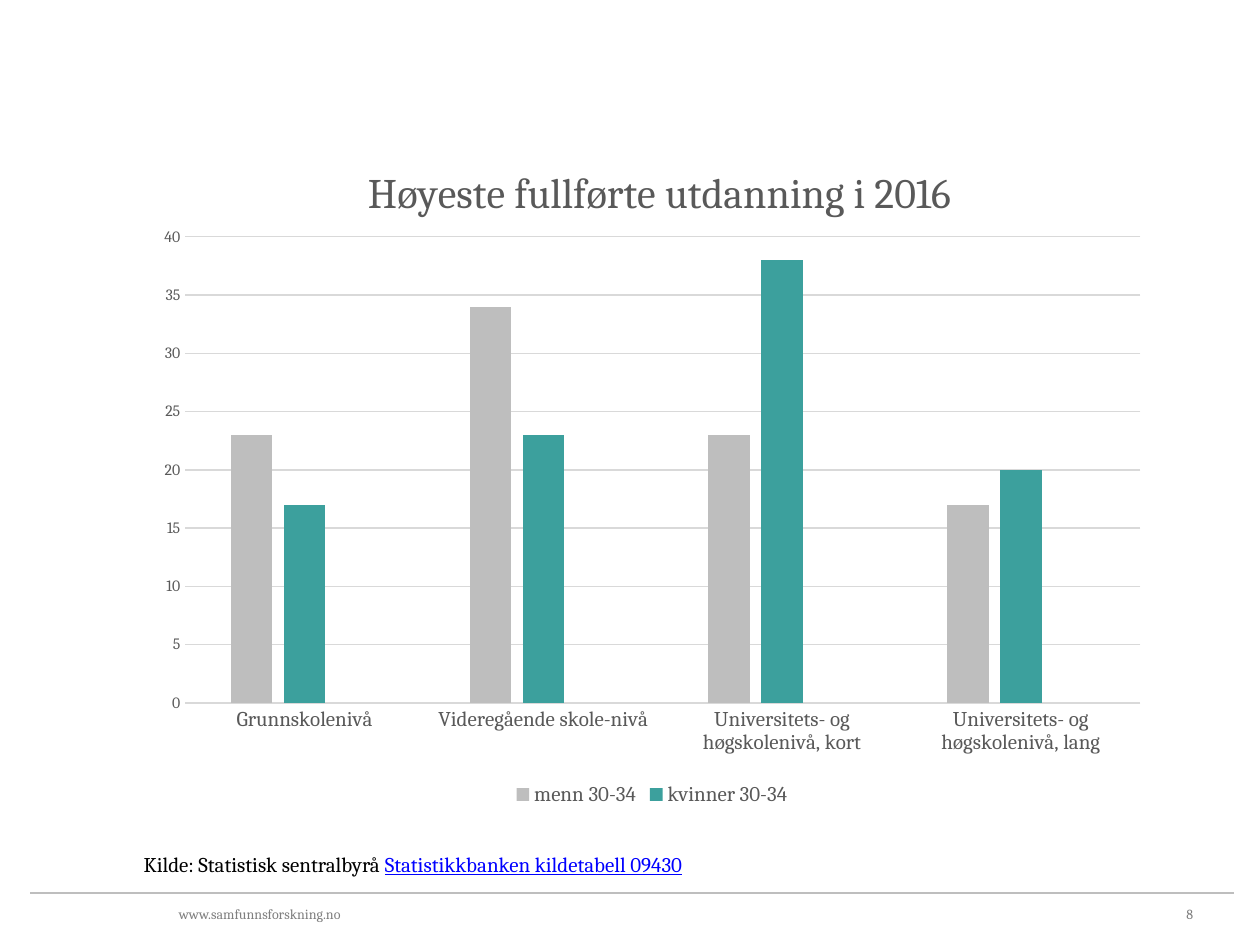
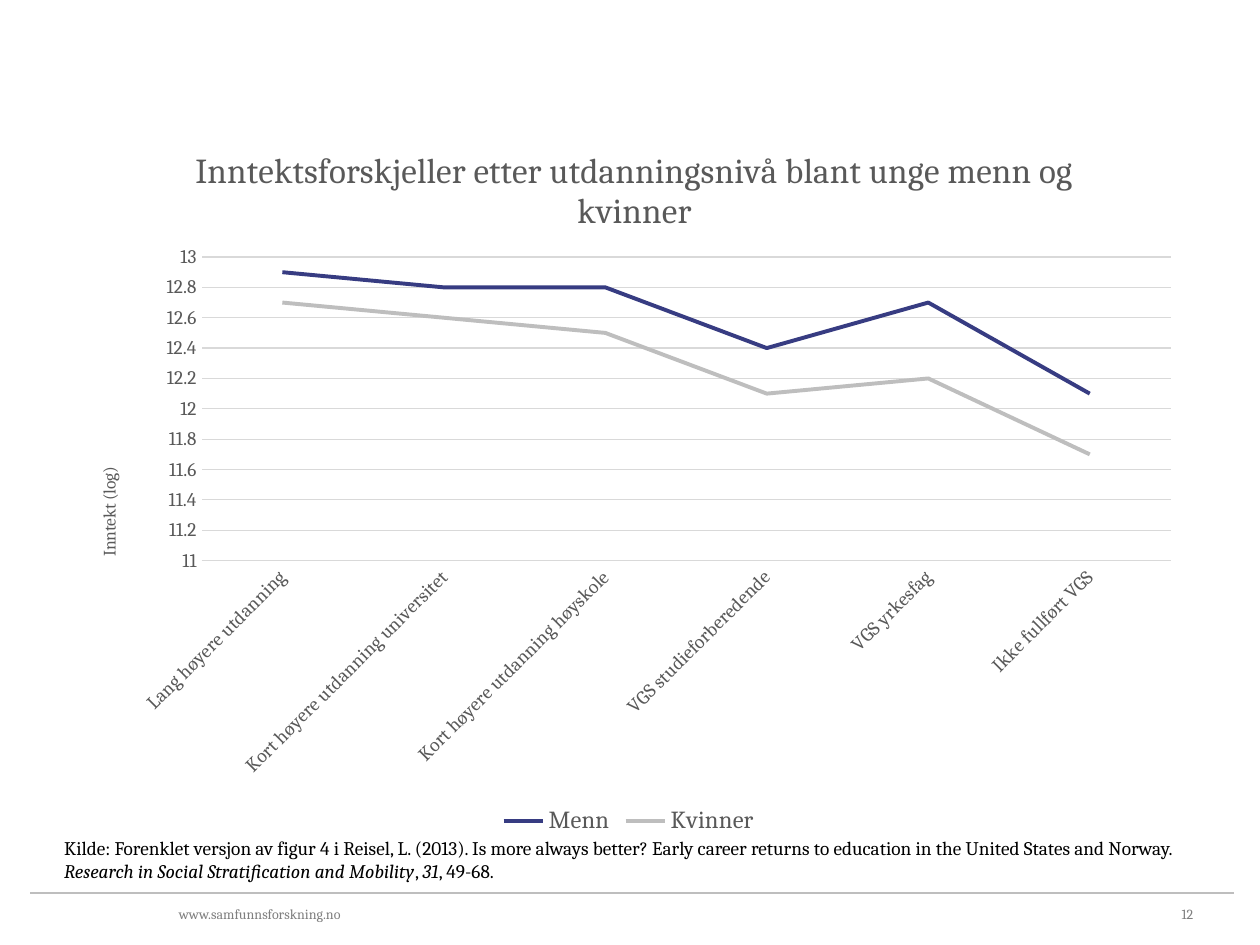
"""Build two chart slides on education and income among young men and women."""
from dataclasses import dataclass

from lxml.etree import SubElement
from pptx import Presentation
from pptx.chart.data import CategoryChartData
from pptx.dml.color import RGBColor
from pptx.enum.chart import XL_CHART_TYPE as Chart, XL_LEGEND_POSITION as LegendPos, XL_TICK_MARK as Tick
from pptx.enum.shapes import MSO_CONNECTOR as Conn
from pptx.enum.text import MSO_ANCHOR as Anchor, MSO_AUTO_SIZE as AutoSize, PP_ALIGN as Align
from pptx.oxml import parse_xml
from pptx.oxml.ns import nsdecls, qn
from pptx.util import Inches, Pt


@dataclass(frozen=True)
class Theme:
    """Colours, font and type sizes of the deck."""
    font: str = "Cambria"
    text: str = "000000"
    chart_text: str = "595959"
    footer: str = "7F7F7F"
    link: str = "0000FF"
    grid: str = "D9D9D9"
    grey: str = "BEBEBE"
    teal: str = "3CA09D"
    purple: str = "7D558C"
    navy: str = "373C82"
    footer_size: int = 8
    base_size: int = 10
    value_size: int = 9
    note_size: int = 11
    label_size: int = 12
    legend_size: int = 14
    line_title_size: int = 20
    bar_title_size: int = 24


T = Theme()


def set_attrs(obj, formats):
    """Set each attribute of obj from a dict."""
    for name, value in formats.items():
        setattr(obj, name, value)


def style_font(font, size, color=T.chart_text, **formats):
    """Apply the deck font, a size and a colour."""
    set_attrs(font, {"name": T.font, "size": Pt(size), "bold": False, **formats})
    font.color.rgb = RGBColor.from_string(color)


def style_line(line, color, width):
    """Give a line its colour and width."""
    line.color.rgb = RGBColor.from_string(color)
    line.width = Pt(width)


def add_text(s, box, runs, size, color=T.text, align=Align.LEFT, anchor=Anchor.TOP):
    """Add a text box of (text, formats) runs without insets."""
    tf = s.shapes.add_textbox(*map(Inches, box)).text_frame
    set_attrs(tf, {"word_wrap": True, "auto_size": AutoSize.SHAPE_TO_FIT_TEXT,
                   "vertical_anchor": anchor, "margin_left": 0, "margin_right": 0,
                   "margin_top": 0, "margin_bottom": 0})
    p = tf.paragraphs[0]
    p.alignment = align
    for text, formats in runs:
        r = p.add_run()
        r.text = text
        style_font(r.font, size, **{"color": color, **formats})


def add_footer(s, number):
    """Add the rule, web address and slide number."""
    rule = s.shapes.add_connector(Conn.STRAIGHT, *map(Inches, (0.24, 7.09, 9.79, 7.09)))
    style_line(rule.line, T.grey, 1)
    SubElement(rule._element.spPr, qn("a:effectLst"))
    for box, text, align in (((1.42, 7.19, 2.36, 0.13), "www.samfunnsforskning.no", Align.LEFT),
                             ((8.65, 7.19, 0.82, 0.13), str(number), Align.RIGHT)):
        add_text(s, box, [(text, {})], T.footer_size, T.footer, align, Anchor.MIDDLE)


def set_layout(element, index, frame, area, inner=False):
    """Place a chart part at a slide position given in inches."""
    for old in element.findall(qn("c:layout")):
        element.remove(old)
    left, top, width, height = frame
    values = [("x", (area[0] - left) / width), ("y", (area[1] - top) / height)]
    if inner:
        values += [("w", area[2] / width), ("h", area[3] / height)]
    target = '<c:layoutTarget val="inner"/>' if inner else ""
    modes = "".join(f'<c:{name}Mode val="edge"/>' for name in "xy")
    sizes = "".join(f'<c:{name} val="{value:.4f}"/>' for name, value in values)
    element.insert(index, parse_xml(
        f'<c:layout {nsdecls("c")}><c:manualLayout>{target}{modes}{sizes}'
        '</c:manualLayout></c:layout>'))


def set_title(owner, text, size, frame, place):
    """Title a chart or an axis at a fixed place."""
    title = owner.chart_title if hasattr(owner, "chart_title") else owner.axis_title
    p = title.text_frame.paragraphs[0]
    r = p.add_run()
    r.text = text
    style_font(r.font, size)
    set_layout(title._element, 1, frame, place)


def style_axes(chart, category_size, value_size, scale):
    """Style both axes and set the value scale."""
    low, high, step = scale
    cat, val = chart.category_axis, chart.value_axis
    for axis, size in ((cat, category_size), (val, value_size)):
        set_attrs(axis, {"major_tick_mark": Tick.NONE, "minor_tick_mark": Tick.NONE})
        style_font(axis.tick_labels.font, size)
    style_line(cat.format.line, T.grid, 0.75)
    set_attrs(val, {"minimum_scale": low, "maximum_scale": high, "major_unit": step,
                    "has_major_gridlines": True})
    style_line(val.major_gridlines.format.line, T.grid, 0.75)
    val.format.line.fill.background()


def add_chart(s, kind, frame, plot_area, categories, series, legend_size):
    """Add a chart with a bottom legend and coloured series."""
    data = CategoryChartData()
    data.categories = categories
    for name, values, _ in series:
        data.add_series(name, values)
    chart = s.shapes.add_chart(kind, *map(Inches, frame), data).chart
    style_font(chart.font, T.base_size, T.text)
    chart.has_legend = True
    set_attrs(chart.legend, {"position": LegendPos.BOTTOM, "include_in_layout": False})
    style_font(chart.legend.font, legend_size)
    plot = chart.plots[0]
    plot.vary_by_categories = False
    for ser, (_, _, color) in zip(plot.series, series):
        if kind == Chart.LINE:
            ser.smooth = False
            style_line(ser.format.line, color, 2.25)
        else:
            ser.format.fill.solid()
            ser.format.fill.fore_color.rgb = RGBColor.from_string(color)
    set_layout(chart._chartSpace.chart.plotArea, 0, frame, plot_area, inner=True)
    return chart


def hide_legend_entry(chart, index):
    """Drop one series from the legend."""
    chart.legend._element.insert(1, parse_xml(
        f'<c:legendEntry {nsdecls("c")}><c:idx val="{index}"/><c:delete val="1"/></c:legendEntry>'))


def build_education(s):
    """Fill the slide on highest completed education."""
    frame = (1.14, 1.05, 8.07, 5.39)
    categories = ["Grunnskolenivå", "Videregående skole-nivå",
                  "Universitets- og høgskolenivå, kort", "Universitets- og høgskolenivå, lang"]
    series = [("menn 30-34", (23, 34, 23, 17), T.grey),
              ("kvinner 30-34", (17, 23, 38, 20), T.teal),
              ("Series 3", (None,) * 4, T.purple)]
    chart = add_chart(s, Chart.COLUMN_CLUSTERED, frame, (1.47, 1.88, 7.58, 3.7),
                      categories, series, T.label_size)
    set_attrs(chart.plots[0], {"gap_width": 219, "overlap": -27})
    hide_legend_entry(chart, 2)
    style_axes(chart, T.label_size, T.value_size, (0, 40, 5))
    set_title(chart, "Høyeste fullførte utdanning i 2016", T.bar_title_size, frame, (2.86, 1.25))
    add_text(s, (1.14, 6.76, 7.17, 0.2),
             [("Kilde: Statistisk sentralbyrå ", {}),
              ("Statistikkbanken kildetabell 09430", {"color": T.link, "underline": True})],
             T.label_size)


def build_income(s):
    """Fill the slide on income by education."""
    frame = (0.51, 0.92, 8.96, 5.75)
    categories = ["Lang høyere utdanning", "Kort høyere utdanning universitet",
                  "Kort høyere utdanning høyskole", "VGS studieforberedende",
                  "VGS yrkesfag", "Ikke fullført VGS"]
    series = [("Menn", (12.9, 12.8, 12.8, 12.4, 12.7, 12.1), T.navy),
              ("Kvinner", (12.7, 12.6, 12.5, 12.1, 12.2, 11.7), T.grey)]
    chart = add_chart(s, Chart.LINE, frame, (1.6, 2.04, 7.69, 2.41),
                      categories, series, T.legend_size)
    style_axes(chart, T.note_size, T.note_size, (11, 13, 0.2))
    chart.category_axis.tick_labels.font._element.getparent().getparent().getparent().find(
        qn("a:bodyPr")).set("rot", "-2700000")
    set_title(chart, "Inntektsforskjeller etter utdanningsnivå blant unge menn og kvinner",
              T.line_title_size, frame, (1.5, 1.12))
    set_title(chart.value_axis, "Inntekt (log)", T.base_size, frame, (0.75, 3.68))
    chart.value_axis.axis_title.text_frame._txBody.find(qn("a:bodyPr")).set("rot", "-5400000")
    add_text(s, (0.51, 6.64, 9.21, 0.67),
             [("Kilde: Forenklet versjon av figur 4 i Reisel, L. (2013). Is more always better? "
               "Early career returns to education in the United States and Norway. ", {}),
              ("Research in Social Stratification and Mobility", {"italic": True}),
              (", ", {}), ("31", {"italic": True}), (", 49-68.", {})], T.note_size)


def main():
    """Build and save the deck."""
    prs = Presentation()
    set_attrs(prs, {"slide_width": Inches(10), "slide_height": Inches(7.5)})
    for number, build in ((8, build_education), (12, build_income)):
        s = prs.slides.add_slide(prs.slide_layouts[6])
        add_footer(s, number)
        build(s)
    prs.save("out.pptx")


if __name__ == "__main__":
    main()
